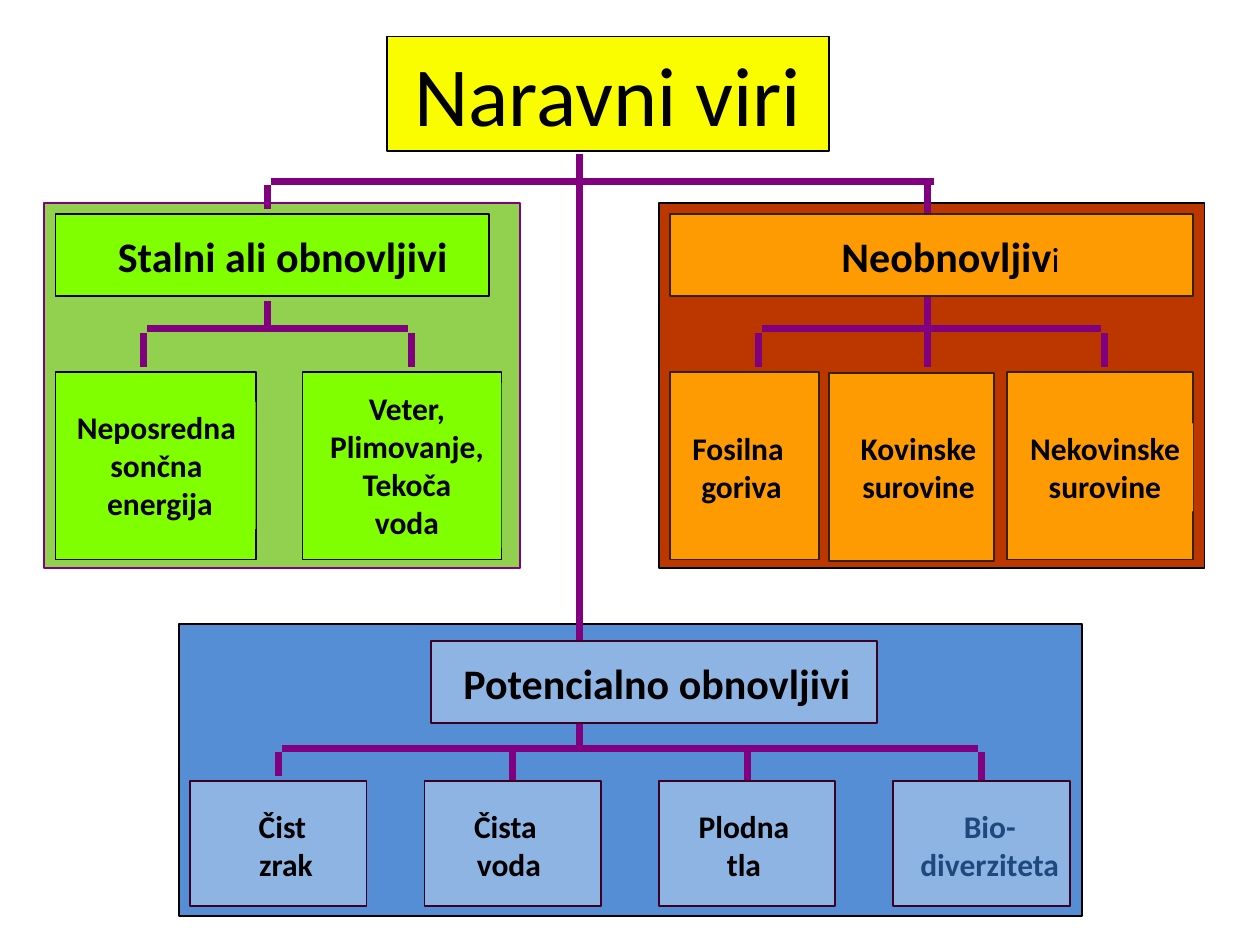
from dataclasses import dataclass

from lxml.etree import SubElement
from pptx import Presentation
from pptx.dml.color import RGBColor
from pptx.enum.shapes import MSO_CONNECTOR, MSO_SHAPE
from pptx.enum.text import MSO_ANCHOR, MSO_AUTO_SIZE, PP_ALIGN
from pptx.oxml.ns import qn
from pptx.util import Pt

PX = 9144  # EMU per px: the slide is 1000 x 750 px


@dataclass(frozen=True)
class Theme:
    font: str = "Calibri"
    ink: str = "000000"
    muted: str = "1F497D"
    branch: str = "800080"
    title_fill: str = "FAFD00"
    green_panel: str = "92D050"
    green: str = "7FFF00"
    red_panel: str = "BC3700"
    orange: str = "FE9B03"
    orange_edge: str = "372000"
    blue_panel: str = "558ED5"
    blue: str = "8EB4E3"
    blue_edge: str = "3C0023"
    title_size: int = 48
    head_size: int = 24
    small_head_size: int = 20
    leaf_size: int = 18
    edge_width: int = 1
    branch_width: int = 4


class Diagram:
    def __init__(self, slide, theme):
        self.shapes = slide.shapes
        self.theme = theme

    def box(self, rect, fill, edge):
        sp = self.shapes.add_shape(MSO_SHAPE.RECTANGLE, *(v * PX for v in rect))
        sp.shadow.inherit = False
        sp.fill.solid()
        sp.fill.fore_color.rgb = RGBColor.from_string(fill)
        sp.line.color.rgb = RGBColor.from_string(edge)
        sp.line.width = Pt(self.theme.edge_width)
        return sp

    def line(self, x1, y1, x2, y2):
        cx = self.shapes.add_connector(
            MSO_CONNECTOR.STRAIGHT, *(v * PX for v in (x1, y1, x2, y2)))
        cx.line.color.rgb = RGBColor.from_string(self.theme.branch)
        cx.line.width = Pt(self.theme.branch_width)
        SubElement(cx._element.spPr, qn("a:effectLst"))

    def branch(self, y, drops):
        """Draw a bar at y with a drop at each (x, bottom), first and last at its ends."""
        self.line(drops[0][0] + 3, y, drops[-1][0] - 3, y)
        for x, bottom in drops:
            self.line(x, y + 3, x, bottom)

    def add_run(self, p, text, size, bold=True, color=None):
        r = p.add_run()
        r.text = text
        r.font.name = self.theme.font
        r.font.size = Pt(size)
        r.font.bold = bold
        r.font.color.rgb = RGBColor.from_string(color or self.theme.ink)

    def set_text(self, sp, lines, size, wrap=False, align=PP_ALIGN.CENTER, **style):
        tf = sp.text_frame
        tf.word_wrap = wrap
        tf.auto_size = MSO_AUTO_SIZE.SHAPE_TO_FIT_TEXT
        tf.vertical_anchor = MSO_ANCHOR.TOP
        for i, text in enumerate(lines):
            p = tf.add_paragraph() if i else tf.paragraphs[0]
            p.alignment = align
            self.add_run(p, text, size, **style)
        return p

    def label(self, rect, lines, size, fill=None, **style):
        sp = self.shapes.add_textbox(*(v * PX for v in rect))
        if fill:
            sp.fill.solid()
            sp.fill.fore_color.rgb = RGBColor.from_string(fill)
        return self.set_text(sp, lines, size, **style)


def draw_panels(d, t):
    d.box((142, 495, 717, 232), t.blue_panel, t.ink)
    d.box((523, 161, 433, 290), t.red_panel, t.ink)
    d.box((35, 161, 378, 290), t.green_panel, t.branch)


def draw_branches(d):
    d.line(215, 144, 741, 144)
    d.line(212, 147, 212, 166)
    d.line(212, 239, 212, 258)
    d.line(736, 147, 736, 291)
    d.line(460, 122, 460, 591)
    d.branch(261, [(114, 291), (327, 291)])
    d.branch(261, [(602, 291), (877, 291)])
    d.branch(594, [(221, 616), (407, 625), (593, 625), (779, 625)])


def draw_title(d, t):
    sp = d.box((307, 29, 351, 91), t.title_fill, t.ink)
    d.set_text(sp, ["Naravni viri"], t.title_size, bold=False)


def draw_renewable(d, t):
    d.box((44, 170, 344, 65), t.green, t.ink)
    d.label((83, 178, 283, 50), ["Stalni ali obnovljivi"], t.head_size, t.green, wrap=True)
    for box, area, lines in (
        ((44, 295, 159, 149), (51, 319, 152, 101), ["Neposredna ", "sončna ", "energija"]),
        ((240, 295, 158, 149), (248, 304, 150, 131),
         ["Veter,", "Plimovanje,", "Tekoča", "voda"]),
    ):
        d.box(box, t.green, t.ink)
        d.label(area, lines, t.leaf_size, t.green, wrap=True)


def draw_nonrenewable(d, t):
    d.box((532, 170, 415, 65), t.orange, t.orange_edge)
    p = d.label((658, 178, 195, 50), ["Neobnovljiv"], t.head_size, t.orange,
                align=PP_ALIGN.LEFT)
    d.add_run(p, "i", t.small_head_size, bold=False)
    for box, (x, w), lines, wrap in (
        ((532, 295, 118, 149), (539, 99), ["Fosilna ", "goriva"], False),
        ((658, 296, 131, 149), (673, 112), ["Kovinske", "surovine"], False),
        ((799, 295, 148, 149), (807, 140), ["Nekovinske ", "surovine"], True),
    ):
        d.box(box, t.orange, t.orange_edge)
        d.label((x, 336, w, 70), lines, t.leaf_size, t.orange, wrap=wrap)


def draw_potential(d, t):
    d.box((342, 509, 354, 65), t.blue, t.blue_edge)
    d.label((358, 517, 330, 50), ["Potencialno obnovljivi"], t.head_size,
            align=PP_ALIGN.LEFT)
    for i, (x, w, lines, color) in enumerate((
        (195, 64, ["Čist ", "zrak"], t.ink),
        (366, 76, ["Čista ", "voda"], t.ink),
        (544, 93, ["Plodna", "tla"], t.ink),
        (720, 131, ["Bio-", "diverziteta"], t.muted),
    )):
        d.box((151 + 186 * i, 620, 140, 99), t.blue, t.blue_edge)
        d.label((x, 636, w, 70), lines, t.leaf_size, color=color)


def main():
    prs = Presentation()
    prs.slide_width, prs.slide_height = 1000 * PX, 750 * PX
    s = prs.slides.add_slide(prs.slide_layouts[6])
    theme = Theme()
    diagram = Diagram(s, theme)
    draw_panels(diagram, theme)
    draw_branches(diagram)
    for draw in (draw_title, draw_renewable, draw_nonrenewable, draw_potential):
        draw(diagram, theme)
    prs.save("out.pptx")


if __name__ == "__main__":
    main()
